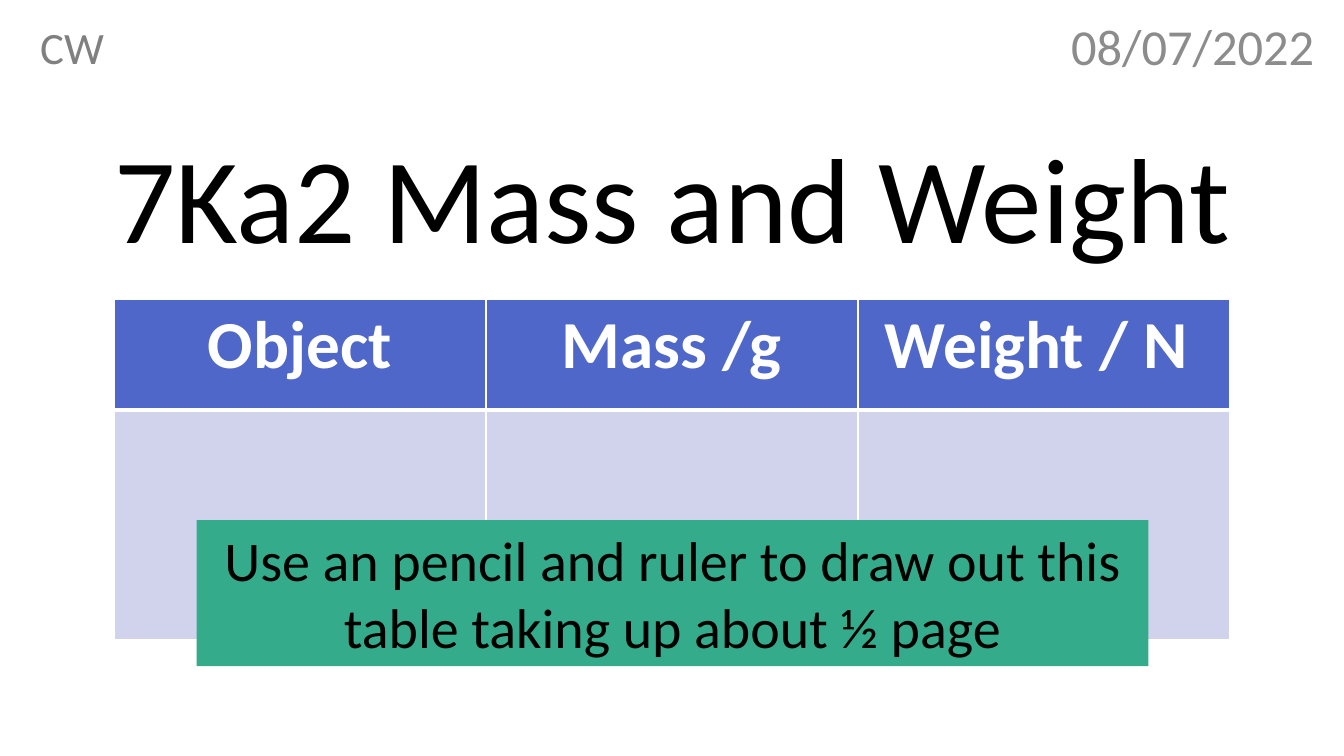
"""Build the Mass and Weight lesson slide."""
from lxml import etree
from pptx import Presentation
from pptx.dml.color import RGBColor
from pptx.enum.shapes import MSO_SHAPE as Shape
from pptx.enum.text import MSO_ANCHOR as Anchor, PP_ALIGN as Align
from pptx.oxml.ns import qn
from pptx.util import Inches, Pt

FONT = "Calibri"
TITLE = "7Ka2 Mass and Weight"
DATE = "08/07/2022"
LABEL = "CW"
HEADS = ["Object", "Mass /g", "Weight / N "]
TASK = "Use an pencil and ruler to draw out this table taking up about ½ page"
ROWS = [(1.1, "4E67C8", 3), (2.28, "D0D3EB", 1)]
COL = 3.69


def color(code):
    return RGBColor.from_string(code)


def write(frame, text, size, code, align=Align.CENTER, bold=False):
    para = frame.paragraphs[0]
    para.alignment = align
    run = para.add_run()
    run.text = text
    font = run.font
    font.name, font.size, font.bold = FONT, Pt(size), bold
    font.color.rgb = color(code)
    return para


def label(slide, box, text, size, code, anchor, align=Align.CENTER, wrap=True):
    frame = slide.shapes.add_textbox(*map(Inches, box)).text_frame
    frame.word_wrap = wrap
    frame.vertical_anchor = anchor
    return write(frame, text, size, code, align)


def edge(cell, bottom):
    props = cell._tc.get_or_add_tcPr()
    widths = {"a:lnL": 1, "a:lnR": 1, "a:lnT": 1, "a:lnB": bottom}
    for spot, (tag, width) in enumerate(widths.items()):
        line = etree.Element(qn(tag), w=str(Pt(width)))
        fill = etree.SubElement(line, qn("a:solidFill"))
        etree.SubElement(fill, qn("a:srgbClr"), val="FFFFFF")
        props.insert(spot, line)


def grid(slide):
    high = sum(row[0] for row in ROWS)
    box = 1.13, 2.97, COL * len(HEADS), high
    table = slide.shapes.add_table(len(ROWS), len(HEADS), *map(Inches, box)).table
    for col in table.columns:
        col.width = Inches(COL)
    for row, (high, code, bottom) in zip(table.rows, ROWS):
        row.height = Inches(high)
        for cell in row.cells:
            cell.fill.solid()
            cell.fill.fore_color.rgb = color(code)
            edge(cell, bottom)
    for cell, head in zip(table.rows[0].cells, HEADS):
        write(cell.text_frame, head, 48, "FFFFFF", bold=True)


def banner(slide):
    shape = slide.shapes.add_shape(Shape.RECTANGLE, *map(Inches, (1.95, 5.16, 9.44, 1.45)))
    shape.shadow.inherit = False
    shape.fill.solid()
    shape.fill.fore_color.rgb = color("34AC8B")
    shape.line.fill.background()
    frame = shape.text_frame
    frame.word_wrap = True
    frame.vertical_anchor = Anchor.TOP
    write(frame, TASK, 40, "000000")


def main():
    deck = Presentation()
    deck.slide_width, deck.slide_height = Inches(13.33), Inches(7.5)
    slide = deck.slides.add_slide(deck.slide_layouts[6])
    title = label(slide, (0.9, 1.16, 11.54, 1.56), TITLE, 86.4, "000000", Anchor.BOTTOM)
    title.line_spacing = 0.9
    label(slide, (10.33, 0.25, 3, 0.4), DATE, 36, "8C8C8C", Anchor.MIDDLE)
    label(slide, (0.3, 0.15, 0.84, 0.64), LABEL, 32, "808080", Anchor.TOP, Align.LEFT, False)
    grid(slide)
    banner(slide)
    deck.save("out.pptx")


if __name__ == "__main__":
    main()
